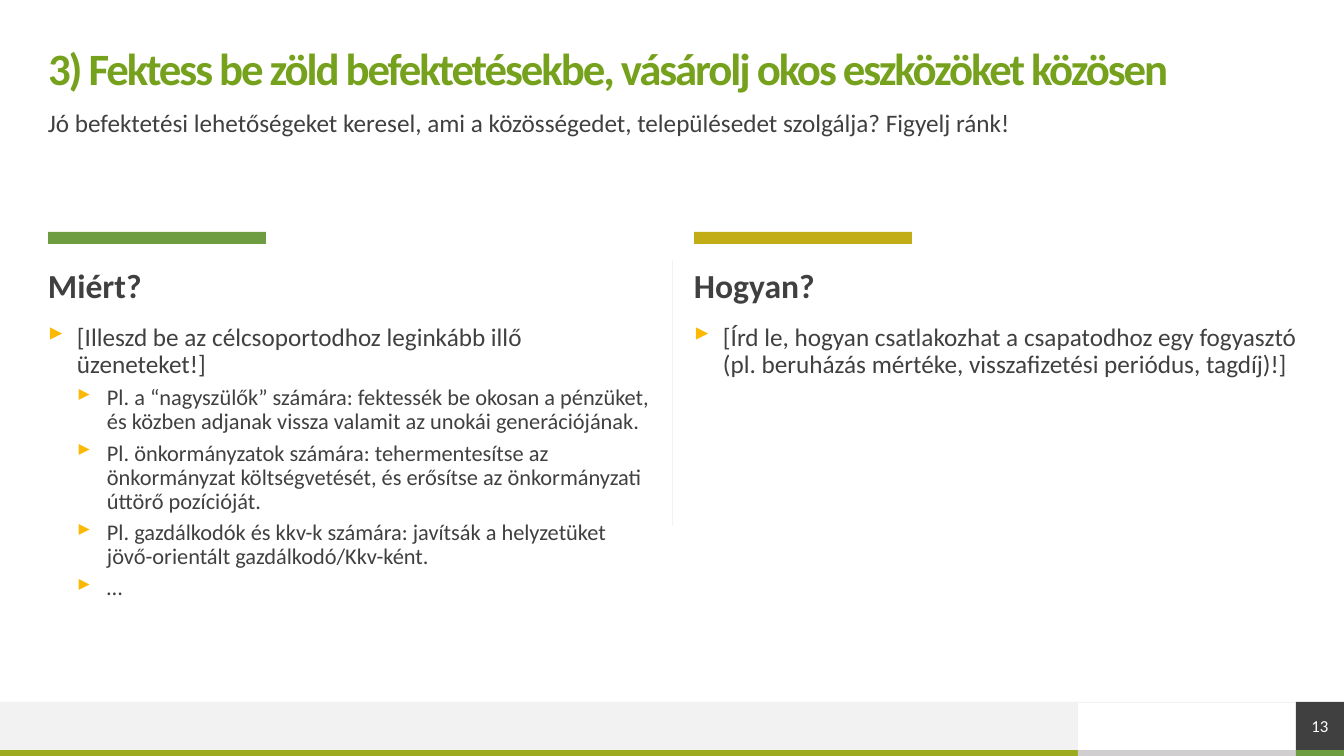
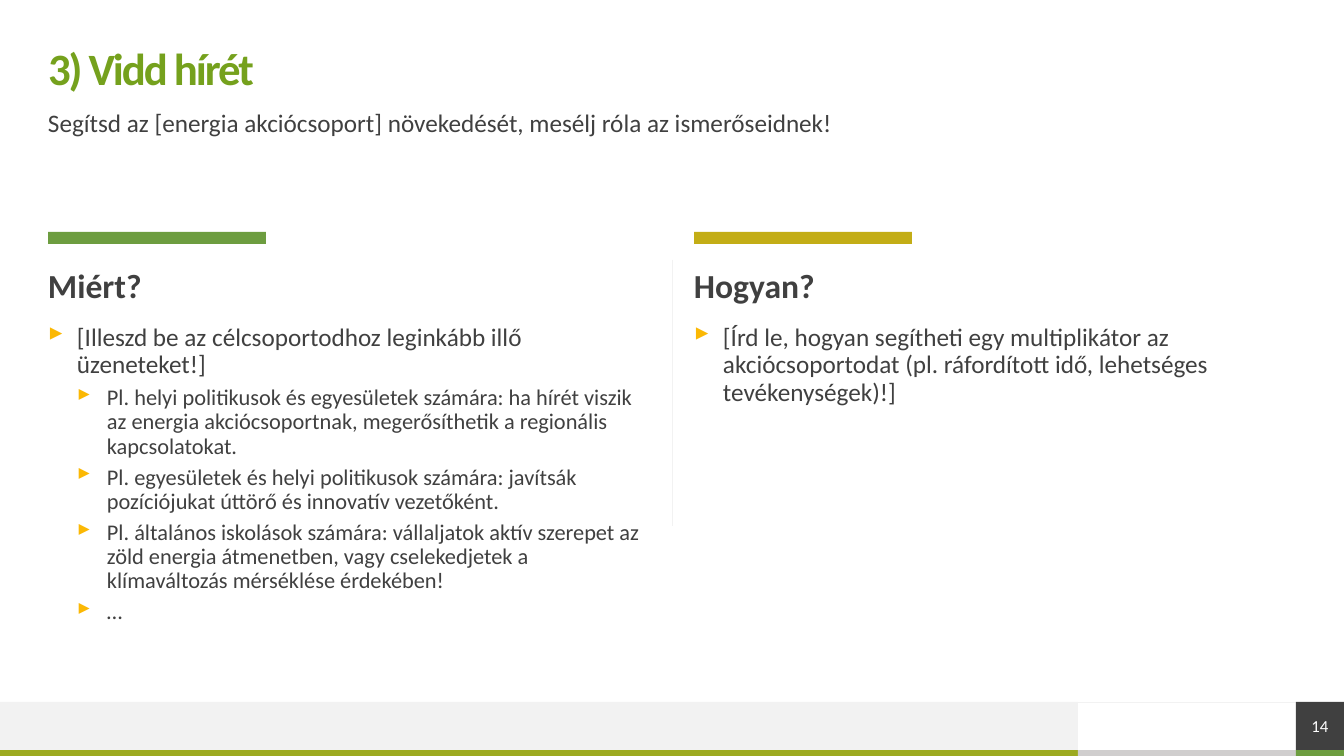
from dataclasses import dataclass

from lxml.etree import SubElement
from pptx import Presentation
from pptx.dml.color import RGBColor
from pptx.enum.shapes import MSO_CONNECTOR, MSO_SHAPE
from pptx.enum.text import MSO_ANCHOR, MSO_AUTO_SIZE, PP_ALIGN
from pptx.oxml.ns import qn
from pptx.util import Pt

# Slide grid in px
WIDTH, HEIGHT = 1344, 756
SCALE = 12192000 / WIDTH
EDGE = 48
COL_W, GAP = 604, 42
BAR_W, BAR_H = 218, 12
FOOT_H, STRIP_H = 48, 6


@dataclass(frozen=True)
class Theme:
    font: str = "Calibri"
    title: str = "75A11D"
    text: str = "404040"
    white: str = "FFFFFF"
    mark: str = "FBB804"
    green: str = "6D9D40"
    gold: str = "C3AD16"
    lime: str = "9CAA20"
    pale: str = "F2F2F2"
    grey: str = "D0CECE"
    title_pt: int = 32
    head_pt: int = 24
    body_pt: int = 18
    sub_pt: int = 16
    page_pt: int = 12


THEME = Theme()

# (text, level) pairs fill each column
SLIDES = [
    {
        "page": 13,
        "title": "3) Fektess be zöld befektetésekbe, vásárolj okos eszközöket közösen",
        "lead": "Jó befektetési lehetőségeket keresel, ami a közösségedet, "
                "településedet szolgálja? Figyelj ránk!",
        "why": [
            ("[Illeszd be az célcsoportodhoz leginkább illő üzeneteket!]", 0),
            ("Pl. a “nagyszülők” számára: fektessék be okosan a pénzüket, és "
             "közben adjanak vissza valamit az unokái generációjának.", 1),
            ("Pl. önkormányzatok számára: tehermentesítse az önkormányzat "
             "költségvetését, és erősítse az önkormányzati úttörő pozícióját.", 1),
            ("Pl. gazdálkodók és kkv-k számára: javítsák a helyzetüket "
             "jövő-orientált gazdálkodó/Kkv-ként.", 1),
            ("…", 1),
        ],
        "how": [
            ("[Írd le, hogyan csatlakozhat a csapatodhoz egy fogyasztó (pl. "
             "beruházás mértéke, visszafizetési periódus, tagdíj)!]", 0),
        ],
    },
    {
        "page": 14,
        "title": "3) Vidd hírét",
        "lead": "Segítsd az [energia akciócsoport] növekedését, "
                "mesélj róla az ismerőseidnek!",
        "why": [
            ("[Illeszd be az célcsoportodhoz leginkább illő üzeneteket!]", 0),
            ("Pl. helyi politikusok és egyesületek számára: ha hírét viszik az "
             "energia akciócsoportnak, megerősíthetik a regionális kapcsolatokat.", 1),
            ("Pl. egyesületek és helyi politikusok számára: javítsák "
             "pozíciójukat úttörő és innovatív vezetőként.", 1),
            ("Pl. általános iskolások számára: vállaljatok aktív szerepet az zöld "
             "energia átmenetben, vagy cselekedjetek a klímaváltozás mérséklése "
             "érdekében!", 1),
            ("…", 1),
        ],
        "how": [
            ("[Írd le, hogyan segítheti egy multiplikátor az akciócsoportodat "
             "(pl. ráfordított idő, lehetséges tevékenységek)!]", 0),
        ],
    },
]


def px(*sizes):
    return [round(size * SCALE) for size in sizes]


# Text helpers
def set_frame(frame, anchor=MSO_ANCHOR.TOP):
    frame.auto_size = MSO_AUTO_SIZE.NONE
    frame.word_wrap = True
    frame.vertical_anchor = anchor
    frame.margin_left = frame.margin_right = 0
    frame.margin_top = frame.margin_bottom = 0


def set_para(para, size, color, bold=False, align=PP_ALIGN.LEFT):
    para.alignment = align
    para.line_spacing = 0.9
    para.space_before = Pt(0)
    for run in para.runs:
        font = run.font
        font.name, font.size, font.bold = THEME.font, Pt(size), bold
        font.color.rgb = RGBColor.from_string(color)


def add_mark(para, level):
    props = para._p.get_or_add_pPr()
    left, hang = px((29, 59)[level], (29, 30)[level])
    props.set("marL", str(left))
    props.set("indent", str(-hang))
    tint = SubElement(props, qn("a:buClr"))
    SubElement(tint, qn("a:srgbClr")).set("val", THEME.mark)
    SubElement(props, qn("a:buChar")).set("char", "▸")


# Element helpers
def add_text(slide, box, text, size, bold=False):
    frame = slide.shapes.add_textbox(*px(*box)).text_frame
    set_frame(frame)
    frame.text = text
    set_para(frame.paragraphs[0], size, THEME.text, bold)


def add_list(slide, box, items):
    frame = slide.shapes.add_textbox(*px(*box)).text_frame
    set_frame(frame)
    for index, (text, level) in enumerate(items):
        para = frame.add_paragraph() if index else frame.paragraphs[0]
        para.text = text
        para.level = level
        add_mark(para, level)
        set_para(para, (THEME.body_pt, THEME.sub_pt)[level], THEME.text)
        if index:
            para.space_before = Pt((10, 5)[level])


def add_rect(slide, box, color):
    shape = slide.shapes.add_shape(MSO_SHAPE.RECTANGLE, *px(*box))
    shape.shadow.inherit = False
    shape.fill.solid()
    shape.fill.fore_color.rgb = RGBColor.from_string(color)
    shape.line.fill.background()
    return shape


def add_line(slide, ends):
    line = slide.shapes.add_connector(MSO_CONNECTOR.STRAIGHT, *px(*ends))
    line.line.color.rgb = RGBColor.from_string(THEME.pale)
    line.line.width = Pt(0.5)
    SubElement(line._element.spPr, qn("a:effectLst"))


# Slide parts
def add_title(slide, text):
    title = slide.shapes.title
    title.left, title.top, title.width, title.height = px(
        EDGE, 47, WIDTH - 2 * EDGE, 48)
    set_frame(title.text_frame, MSO_ANCHOR.MIDDLE)
    title.text_frame.text = text
    para = title.text_frame.paragraphs[0]
    set_para(para, THEME.title_pt, THEME.title, True)
    para.runs[0]._r.get_or_add_rPr().set("spc", "-150")


def add_foot(slide, page):
    base = HEIGHT - STRIP_H
    top = base - FOOT_H
    right = WIDTH - FOOT_H
    split = right - BAR_W
    add_rect(slide, (0, top, split, FOOT_H), THEME.pale)
    add_rect(slide, (0, base, split, STRIP_H), THEME.lime)
    add_rect(slide, (split, base, BAR_W, STRIP_H), THEME.grey)
    add_rect(slide, (right, base, FOOT_H, STRIP_H), THEME.green)
    add_line(slide, (0, top, WIDTH, top))
    # Page number
    frame = add_rect(slide, (right, top, FOOT_H, FOOT_H), THEME.text).text_frame
    set_frame(frame, MSO_ANCHOR.MIDDLE)
    frame.text = str(page)
    para = frame.paragraphs[0]
    set_para(para, THEME.page_pt, THEME.white, align=PP_ALIGN.CENTER)
    para.line_spacing = 1.0


def add_column(slide, index, head, items, color):
    left = EDGE + index * (COL_W + GAP)
    add_rect(slide, (left, 232, BAR_W, BAR_H), color)
    add_text(slide, (left, 269, COL_W, 39), head, THEME.head_pt, True)
    add_list(slide, (left, 325, COL_W, 242), items)


def main():
    deck = Presentation()
    deck.slide_width, deck.slide_height = px(WIDTH, HEIGHT)
    for data in SLIDES:
        slide = deck.slides.add_slide(deck.slide_layouts[5])
        add_foot(slide, data["page"])
        add_title(slide, data["title"])
        add_text(slide, (EDGE, 111, WIDTH - 2 * EDGE, 39), data["lead"],
                 THEME.body_pt)
        add_column(slide, 0, "Miért?", data["why"], THEME.green)
        add_line(slide, (WIDTH // 2, 260, WIDTH // 2, 526))
        add_column(slide, 1, "Hogyan?", data["how"], THEME.gold)
    deck.save("out.pptx")


if __name__ == "__main__":
    main()
